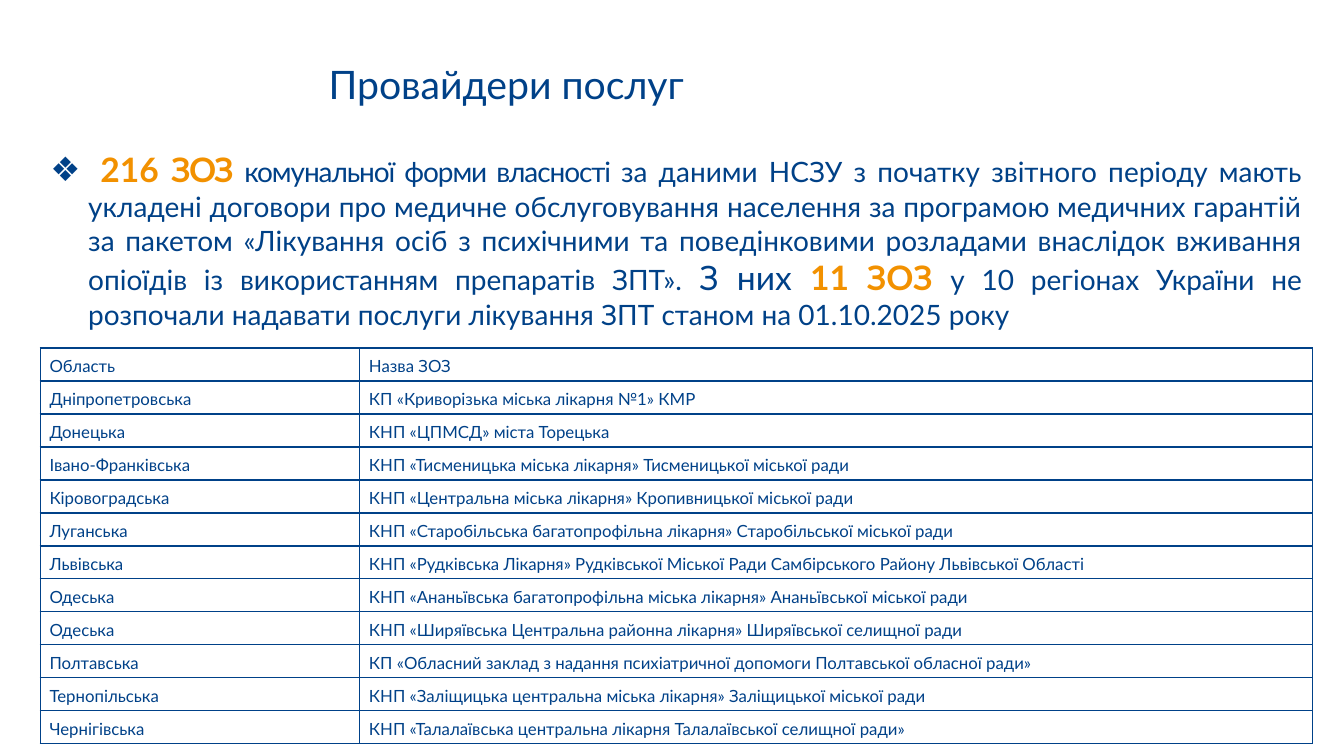
from lxml import etree
from pptx import Presentation
from pptx.dml.color import RGBColor
from pptx.enum.text import MSO_ANCHOR, MSO_AUTO_SIZE, PP_ALIGN
from pptx.oxml.ns import qn
from pptx.util import Pt

LEFT, JUSTIFY = PP_ALIGN.LEFT, PP_ALIGN.JUSTIFY
TOP, MIDDLE = MSO_ANCHOR.TOP, MSO_ANCHOR.MIDDLE
NO_FIT = MSO_AUTO_SIZE.NONE

BLUE, DEEP_BLUE, ORANGE = "004188", "004187", "F29100"

SUMMARY = [
    (" ", 24, BLUE, True, 0),
    ("216 ", 24, ORANGE, True, 0),
    ("ЗОЗ ", 24, ORANGE, True, -1.1),
    ("комунальної форми власності ", 20, BLUE, False, -0.8),
    ("за даними НСЗУ з початку звітного періоду мають укладені договори про медичне "
     "обслуговування населення за програмою медичних гарантій за пакетом «Лікування осіб "
     "з психічними та поведінковими розладами внаслідок вживання опіоїдів із використанням "
     "препаратів ЗПТ». ", 20, DEEP_BLUE, False, 0),
    ("З них ", 24, BLUE, False, 0),
    ("11 ЗОЗ ", 24, ORANGE, True, 0),
    ("у 10 регіонах України не ", 20, BLUE, False, 0),
    ("розпочали надавати послуги лікування ЗПТ станом на 01.10.2025 року",
     20, DEEP_BLUE, False, 0),
]

PROVIDERS = [
    ("Область", "Назва ЗОЗ"),
    ("Дніпропетровська", "КП «Криворізька міська лікарня №1» КМР"),
    ("Донецька", "КНП «ЦПМСД» міста Торецька"),
    ("Івано-Франківська", "КНП «Тисменицька міська лікарня» Тисменицької міської ради"),
    ("Кіровоградська", "КНП «Центральна міська лікарня» Кропивницької міської ради"),
    ("Луганська", "КНП «Старобільська багатопрофільна лікарня» Старобільської міської ради"),
    ("Львівська", "КНП «Рудківська Лікарня» Рудківської Міської Ради Самбірського Району "
                  "Львівської Області"),
    ("Одеська", "КНП «Ананьївська багатопрофільна міська лікарня» Ананьївської міської ради"),
    ("Одеська", "КНП «Ширяївська Центральна районна лікарня» Ширяївської селищної ради"),
    ("Полтавська", "КП «Обласний заклад з надання психіатричної допомоги Полтавської "
                   "обласної ради»"),
    ("Тернопільська", "КНП «Заліщицька центральна міська лікарня» Заліщицької міської ради"),
    ("Чернігівська", "КНП «Талалаївська центральна лікарня Талалаївської селищної ради»"),
]


def color(hex_string):
    return RGBColor.from_string(hex_string)


class SlideBuilder:
    font_name = "Lato"

    def __init__(self, slide):
        self.slide = slide

    def style_run(self, run, size, hex_string, bold=False, spacing=0):
        run.font.name = self.font_name
        run.font.size = Pt(size)
        run.font.bold = bold
        run.font.color.rgb = color(hex_string)
        if spacing:
            run.font._element.set("spc", str(round(spacing * 100)))

    def place(self, shape, left, top, width, height):
        shape.left, shape.top = Pt(left), Pt(top)
        shape.width, shape.height = Pt(width), Pt(height)
        frame = shape.text_frame
        frame.word_wrap = True
        frame.auto_size = NO_FIT
        frame.vertical_anchor = TOP
        return frame

    def title(self, text, box, size):
        frame = self.place(self.slide.shapes.title, *box)
        frame.text = text
        paragraph = frame.paragraphs[0]
        paragraph.alignment = LEFT
        paragraph.line_spacing = 0.9
        self.style_run(paragraph.runs[0], size, BLUE)

    def bullet(self, runs, box, mark, indent):
        frame = self.place(self.slide.placeholders[1], *box)
        paragraph = frame.paragraphs[0]
        properties = paragraph._p.get_or_add_pPr()
        properties.set("marL", str(Pt(indent)))
        properties.set("indent", str(-Pt(indent)))
        etree.SubElement(properties, qn("a:buChar")).set("char", mark)
        paragraph.alignment = JUSTIFY
        paragraph.space_before = Pt(0)
        for text, *style in runs:
            run = paragraph.add_run()
            run.text = text
            self.style_run(run, *style)

    def borders(self, cell, width, hex_string):
        properties = cell._tc.get_or_add_tcPr()
        for side in ("lnL", "lnR", "lnT", "lnB"):
            line = etree.SubElement(properties, qn(f"a:{side}"), w=str(Pt(width)))
            fill = etree.SubElement(line, qn("a:solidFill"))
            etree.SubElement(fill, qn("a:srgbClr"), val=hex_string)

    def cell(self, cell, text, size):
        self.borders(cell, 1, BLUE)
        cell.fill.background()
        cell.vertical_anchor = MIDDLE
        cell.margin_left = cell.margin_right = Pt(5.2)
        cell.margin_top = cell.margin_bottom = 0
        cell.text = text
        paragraph = cell.text_frame.paragraphs[0]
        paragraph._p.get_or_add_pPr().set("indent", str(Pt(1.4)))
        paragraph.alignment = JUSTIFY
        paragraph.line_spacing = 1.15
        paragraph.space_after = Pt(8)
        self.style_run(paragraph.runs[0], size, BLUE)

    def table(self, rows, left, top, column_widths, row_height, size):
        frame = self.slide.shapes.add_table(
            len(rows), len(column_widths), Pt(left), Pt(top),
            Pt(sum(column_widths)), Pt(row_height * len(rows)))
        table = frame.table
        table.first_row = table.horz_banding = False
        for column, width in zip(table.columns, column_widths):
            column.width = Pt(width)
        for row, texts in zip(table.rows, rows):
            row.height = Pt(row_height)
            for cell, text in zip(row.cells, texts):
                self.cell(cell, text, size)


def main():
    presentation = Presentation()
    presentation.slide_width, presentation.slide_height = Pt(960), Pt(540)
    slide = presentation.slides.add_slide(presentation.slide_layouts[1])
    builder = SlideBuilder(slide)
    builder.title("Провайдери послуг", (227.5, 43.2, 308, 28.8), 28)
    builder.bullet(SUMMARY, (28.8, 103, 908.6, 138.2), "❖", 27)
    builder.table(PROVIDERS, 28.8, 248.6, (228.2, 680.4), 23.58, 12)
    presentation.save("out.pptx")


if __name__ == "__main__":
    main()
